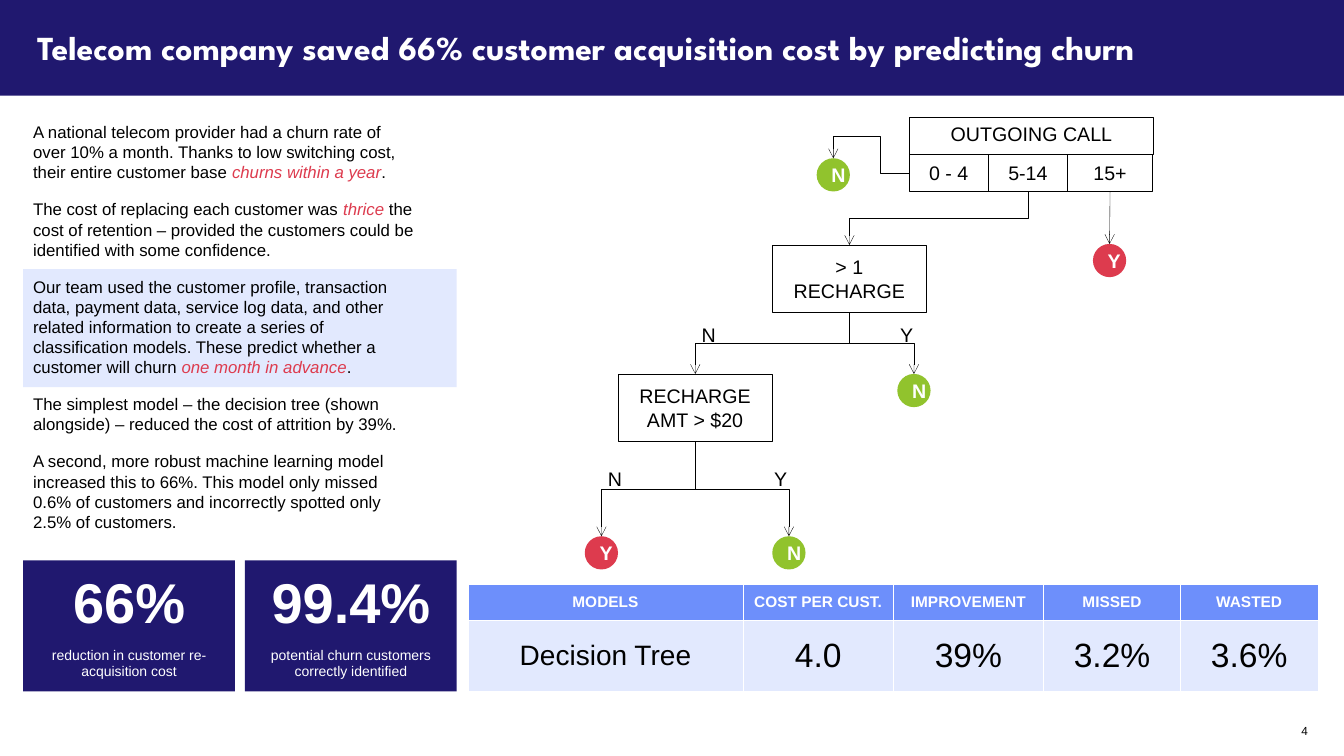
from lxml.etree import SubElement
from pptx import Presentation
from pptx.dml.color import RGBColor
from pptx.enum.shapes import MSO_CONNECTOR, MSO_SHAPE
from pptx.enum.text import MSO_ANCHOR, PP_ALIGN
from pptx.oxml.ns import qn
from pptx.util import Inches, Pt

THEME = {
    "navy": "20186F", "blue": "6D8FFB", "pale": "E2E9FE", "white": "FFFFFF",
    "black": "000000", "red": "DD3B4E", "green": "91C32D",
    "thin": 0.25, "medium": 0.5,
    "title": {"name": "League Spartan", "size": 24, "bold": True, "color": "white"},
    "body": {"name": "Arial", "size": 12, "color": "black"},
    "accent": {"name": "Arial", "size": 12, "italic": True, "color": "red"},
    "figure": {"name": "Arial", "size": 40, "bold": True, "color": "white"},
    "caption": {"name": "Arial", "size": 10, "color": "white"},
    "node": {"name": "Arial", "size": 14, "color": "black"},
    "leaf": {"name": "Arial", "size": 14, "bold": True, "color": "white"},
    "header": {"name": "Arial", "size": 11, "bold": True, "color": "white"},
    "model": {"name": "Arial", "size": 20, "color": "black"},
    "value": {"name": "Arial", "size": 24, "color": "black"},
    "number": {"name": "Arial", "size": 10.5, "color": "black"},
}

TITLE = "Telecom company saved 66% customer acquisition cost by predicting churn"
PAGE_NUMBER = "4"
# Each story paragraph alternates plain and accented text.
STORY = [
    ["A national telecom provider had a churn rate of over 10% a month. Thanks to low "
     "switching cost, their entire customer base ", "churns within a year", "."],
    ["The cost of replacing each customer was ", "thrice",
     " the cost of retention – provided the customers could be identified with some confidence."],
    ["Our team used the customer profile, transaction data, payment data, service log data, "
     "and other related information to create a series of classification models. These predict "
     "whether a customer will churn ", "one month in advance", "."],
    ["The simplest model – the decision tree (shown alongside) – reduced the cost of attrition by 39%."],
    ["A second, more robust machine learning model increased this to 66%. This model only missed "
     "0.6% of customers and incorrectly spotted only 2.5% of customers."],
]
STATS = [("66%", "reduction in customer re-acquisition cost"),
         ("99.4%", "potential churn customers correctly identified")]
MODELS = [["MODELS", "COST PER CUST.", "IMPROVEMENT", "MISSED", "WASTED"],
          ["Decision Tree", "4.0", "39%", "3.2%", "3.6%"]]
COLUMN_WIDTHS = [2.73, 1.49, 1.49, 1.36, 1.36]
ROW_HEIGHTS = [0.36, 0.71]

# Decision tree: name -> text, left, top, width, height
QUESTIONS = {
    "recharge": ("> 1 RECHARGE", 7.66, 2.43, 1.53, 0.67),
    "amount": ("RECHARGE AMT > $20", 6.13, 3.71, 1.53, 0.67),
}
CALL_RANGES = {
    "few": ("0 - 4", 9.02, 1.53, 0.78, 0.37),
    "some": ("5-14", 9.8, 1.53, 0.79, 0.37),
    "many": ("15+", 10.59, 1.53, 0.84, 0.37),
}
LEAF_SIZE = 0.33
LEAF_COLORS = {"N": "green", "Y": "red"}
LEAVES = {
    "few leaf": ("N", 8.1, 1.57),
    "many leaf": ("Y", 10.84, 2.42),
    "recharge leaf": ("N", 8.9, 3.71),
    "amount no": ("Y", 5.8, 5.32),
    "amount yes": ("N", 7.66, 5.32),
}
BRANCHES = [("some", "recharge"), ("recharge", "amount"), ("recharge", "recharge leaf"),
            ("amount", "amount no"), ("amount", "amount yes")]
BRANCH_LABELS = [("N", 6.86, 3.15), ("Y", 8.83, 3.15), ("N", 5.93, 4.58), ("Y", 7.58, 4.58)]
TOP, LEFT, BOTTOM = 0, 1, 2


def rgb(name):
    return RGBColor.from_string(THEME[name])


def add_span(para, text, style):
    span = para.add_run()
    span.text = text
    for key, value in THEME[style].items():
        if key == "color":
            span.font.color.rgb = rgb(value)
        else:
            setattr(span.font, key, Pt(value) if key == "size" else value)
    return span


def add_text(slide, at, text, style, **frame_format):
    box = slide.shapes.add_textbox(*map(Inches, at))
    for key, value in {"word_wrap": True, **frame_format}.items():
        setattr(box.text_frame, key, value)
    return box, add_span(box.text_frame.paragraphs[0], text, style)


def add_box(slide, at, text="", style="node", fill=None, line=None,
            anchor=MSO_ANCHOR.MIDDLE, preset=MSO_SHAPE.RECTANGLE):
    box = slide.shapes.add_shape(preset, *map(Inches, at))
    box.shadow.inherit = False
    if fill:
        box.fill.solid()
        box.fill.fore_color.rgb = rgb(fill)
    else:
        box.fill.background()
    if line:
        box.line.color.rgb = rgb("black")
        box.line.width = Pt(THEME[line])
    else:
        box.line.fill.background()
    if text:
        box.text_frame.vertical_anchor = anchor
        para = box.text_frame.paragraphs[0]
        para.alignment = PP_ALIGN.CENTER
        add_span(para, text, style)
    return box


def add_arrow(slide, start, end, kind=MSO_CONNECTOR.ELBOW, start_site=BOTTOM):
    arrow = slide.shapes.add_connector(kind, 0, 0, 0, 0)
    arrow.begin_connect(start, start_site)
    arrow.end_connect(end, TOP)
    arrow.line.color.rgb = rgb("black")
    arrow.line.width = Pt(THEME["thin"])
    SubElement(arrow.line._get_or_add_ln(), qn("a:tailEnd"), type="arrow")
    SubElement(arrow._element.spPr, qn("a:effectLst"))
    return arrow


def turn_downwards(arrow):
    """Rotate an elbow so that it leaves and arrives vertically."""
    run, drop = arrow.end_x - arrow.begin_x, arrow.end_y - arrow.begin_y
    middle_x = (arrow.begin_x + arrow.end_x) // 2
    middle_y = (arrow.begin_y + arrow.end_y) // 2
    frame = arrow._element.spPr.xfrm
    frame.flipH, frame.flipV = run > 0, False
    frame.set("rot", str((270 if run > 0 else 90) * 60000))
    arrow.width, arrow.height = drop, abs(run)
    arrow.left, arrow.top = middle_x - drop // 2, middle_y - abs(run) // 2


def loop_over(arrow, turn, rise):
    """Send an elbow left, up past its end and down onto it."""
    frame = arrow._element.spPr.xfrm
    frame.flipH = frame.flipV = False
    frame.set("rot", str(180 * 60000))
    geometry = arrow._element.spPr.find(qn("a:prstGeom"))
    geometry.set("prst", "bentConnector4")
    guides = geometry.find(qn("a:avLst"))
    for name, share in (("adj1", turn), ("adj2", rise)):
        SubElement(guides, qn("a:gd"), name=name, fmla=f"val {round(share * 100000)}")


def add_story(slide):
    add_box(slide, (0.23, 2.67, 4.3, 1.17), fill="pale")
    box = slide.shapes.add_textbox(*map(Inches, (0.23, 1.16, 4, 4.3)))
    box.text_frame.word_wrap = True
    for index, parts in enumerate(STORY):
        para = box.text_frame.add_paragraph() if index else box.text_frame.paragraphs[0]
        para.space_before = Pt(12 if index else 0)
        for position, text in enumerate(parts):
            add_span(para, text, "accent" if position % 2 else "body")


def add_tree(slide):
    add_box(slide, (9.02, 1.16, 2.42, 0.37), "OUTGOING CALL", fill="white", line="thin",
            anchor=MSO_ANCHOR.TOP)
    nodes = {}
    for group, fill, line in ((CALL_RANGES, None, "medium"), (QUESTIONS, "white", "thin")):
        for name, (text, *at) in group.items():
            nodes[name] = add_box(slide, at, text, fill=fill, line=line)
    for name, (text, left, top) in LEAVES.items():
        nodes[name] = add_box(slide, (left, top, LEAF_SIZE, LEAF_SIZE), text, "leaf",
                              fill=LEAF_COLORS[text], preset=MSO_SHAPE.OVAL)
    for start, end in BRANCHES:
        turn_downwards(add_arrow(slide, nodes[start], nodes[end]))
    add_arrow(slide, nodes["many"], nodes["many leaf"], MSO_CONNECTOR.STRAIGHT)
    loop_over(add_arrow(slide, nodes["few"], nodes["few leaf"], start_site=LEFT), 0.39, 2.48)
    for text, left, top in BRANCH_LABELS:
        add_text(slide, (left, top, 0.29, 0.29), text, "node", word_wrap=False, margin_right=0)


def add_models(slide):
    table = slide.shapes.add_table(
        len(MODELS), len(COLUMN_WIDTHS), Inches(4.64), Inches(5.79),
        Inches(sum(COLUMN_WIDTHS)), Inches(sum(ROW_HEIGHTS))).table
    for column, width in zip(table.columns, COLUMN_WIDTHS):
        column.width = Inches(width)
    for row_index, (row, height) in enumerate(zip(MODELS, ROW_HEIGHTS)):
        table.rows[row_index].height = Inches(height)
        for column_index, text in enumerate(row):
            cell = table.cell(row_index, column_index)
            cell.vertical_anchor = MSO_ANCHOR.MIDDLE
            cell.margin_left = cell.margin_right = Inches(0.05)
            para = cell.text_frame.paragraphs[0]
            para.alignment = PP_ALIGN.CENTER
            body_style = "value" if column_index else "model"
            add_span(para, text, body_style if row_index else "header")
            for side in ("lnL", "lnR", "lnT", "lnB"):
                border = SubElement(cell._tc.get_or_add_tcPr(), qn(f"a:{side}"),
                                    w=str(Pt(THEME["thin"])))
                paint = SubElement(border, qn("a:solidFill"))
                SubElement(paint, qn("a:srgbClr"), val=THEME["white"])
            cell.fill.solid()
            cell.fill.fore_color.rgb = rgb("pale" if row_index else "blue")


def main():
    deck = Presentation()
    deck.slide_width, deck.slide_height = Inches(13.33), Inches(7.5)
    slide = deck.slides.add_slide(deck.slide_layouts[6])
    add_box(slide, (0, 0, 13.33, 0.95), fill="navy")
    add_text(slide, (0.27, 0.12, 12.8, 0.7), TITLE, "title", vertical_anchor=MSO_ANCHOR.MIDDLE)
    add_story(slide)
    for index, (figure, caption) in enumerate(STATS):
        left = 0.23 + index * 2.2
        add_box(slide, (left, 5.56, 2.1, 0.8), figure, "figure", fill="navy")
        add_box(slide, (left, 6.36, 2.1, 0.5), caption, "caption", fill="navy",
                anchor=MSO_ANCHOR.TOP)
    add_tree(slide)
    add_models(slide)
    box, span = add_text(slide, (11.37, 6.98, 1.7, 0.4), PAGE_NUMBER, "number",
                         vertical_anchor=MSO_ANCHOR.BOTTOM)
    box.text_frame.paragraphs[0].alignment = PP_ALIGN.RIGHT
    span._r.get_or_add_rPr().set("cap", "small")
    deck.save("out.pptx")


if __name__ == "__main__":
    main()
